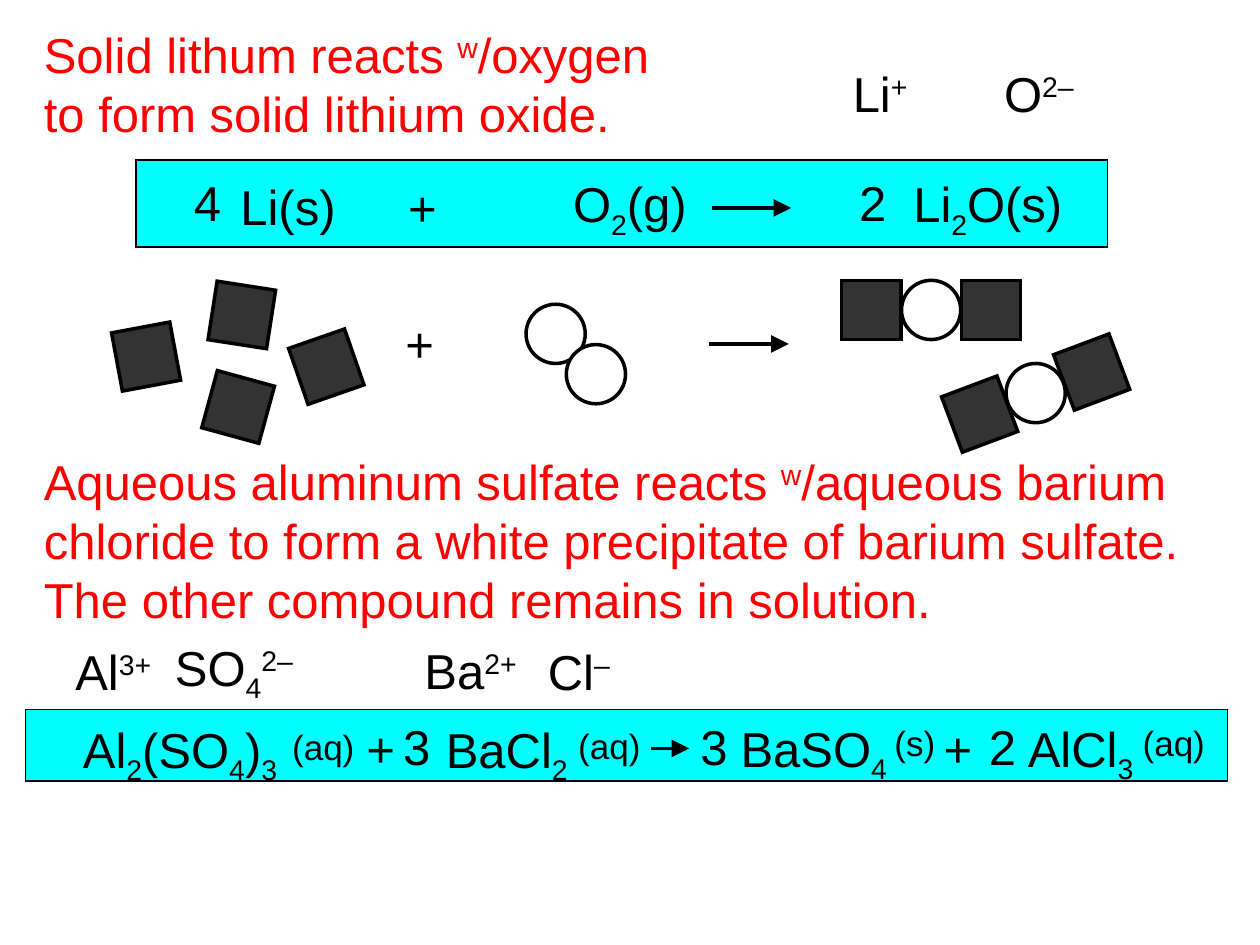
from lxml import etree
from pptx import Presentation
from pptx import util as u
from pptx.dml.color import RGBColor
from pptx.enum import shapes, text
from pptx.oxml.ns import qn

BLACK = RGBColor(0x00, 0x00, 0x00)
WHITE = RGBColor(0xFF, 0xFF, 0xFF)
RED = RGBColor(0xFF, 0x00, 0x00)
CYAN = RGBColor(0x00, 0xFF, 0xFF)
DARK = RGBColor(0x33, 0x33, 0x33)
RECT = shapes.MSO_SHAPE.RECTANGLE
OVAL = shapes.MSO_SHAPE.OVAL
TOP, MIDDLE = text.MSO_ANCHOR.TOP, text.MSO_ANCHOR.MIDDLE
ATOM = 0.47    # side or diameter of an atom
BOND = 0.475   # distance between atom centres in lithium oxide
BASELINES = {"^": "30000", "_": "-25000"}


class Page:
    """Style and drawing methods for one slide."""
    font = "Arial"

    def __init__(self, slide):
        self.s = slide

    def shape(self, kind, x, y, w, h, fill, line=0.75, rot=0, parent=None):
        sp = (parent or self.s).shapes.add_shape(
            kind, u.Inches(x), u.Inches(y), u.Inches(w), u.Inches(h))
        sp.shadow.inherit = False
        sp.fill.solid()
        sp.fill.fore_color.rgb = fill
        sp.line.color.rgb = BLACK
        sp.line.width = u.Pt(line)
        etree.SubElement(sp.line._get_or_add_ln(), qn("a:miter"), lim="800000")
        sp.rotation = rot
        return sp

    def lithium(self, cx, cy, rot=0, parent=None):
        self.shape(RECT, cx - ATOM / 2, cy - ATOM / 2, ATOM, ATOM, DARK, 2, rot, parent)

    def oxygen(self, cx, cy, parent=None):
        self.shape(OVAL, cx - ATOM / 2, cy - ATOM / 2, ATOM, ATOM, WHITE, 2, 0, parent)

    def oxygen_pair(self, cx, cy, offset):
        group = self.s.shapes.add_group_shape()
        for d in (-offset, offset):
            self.oxygen(cx + d, cy + d, group)

    def lithium_oxide(self, cx, cy, rot=0):
        group = self.s.shapes.add_group_shape()
        self.oxygen(cx, cy, group)
        for d in (-BOND, BOND):
            self.lithium(cx + d, cy, parent=group)
        group.rotation = rot

    def arrow(self, x1, x2, y):
        c = self.s.shapes.add_connector(
            shapes.MSO_CONNECTOR.STRAIGHT,
            u.Inches(x1), u.Inches(y), u.Inches(x2), u.Inches(y))
        c.line.color.rgb = BLACK
        c.line.width = u.Pt(2)
        etree.SubElement(c.line._get_or_add_ln(), qn("a:tailEnd"),
                         type="triangle", w="lg", len="lg")
        etree.SubElement(c._element.spPr, qn("a:effectLst"))

    def text(self, x, y, w, h, lines, size=28, color=BLACK, anchor=MIDDLE):
        """Each line is a list of runs; ^ starts a superscript, _ a subscript."""
        tf = self.s.shapes.add_textbox(
            u.Inches(x), u.Inches(y), u.Inches(w), u.Inches(h)).text_frame
        tf.word_wrap = False
        tf.auto_size = text.MSO_AUTO_SIZE.SHAPE_TO_FIT_TEXT
        tf.vertical_anchor = anchor
        for i, runs in enumerate(lines):
            p = tf.paragraphs[0] if i == 0 else tf.add_paragraph()
            for part in runs:
                r = p.add_run()
                r.text = part.lstrip("^_")
                r.font.name = self.font
                r.font.size = u.Pt(size)
                r.font.color.rgb = color
                if part[0] in BASELINES:
                    r._r.get_or_add_rPr().set("baseline", BASELINES[part[0]])

    def formula(self, x, y, w, *runs, anchor=MIDDLE):
        self.text(x, y, w, 0.57, [runs], anchor=anchor)

    def state(self, x, y, w, label):
        self.text(x, y, w, 0.43, [[label]], size=20, anchor=TOP)


def main():
    prs = Presentation()
    prs.slide_width, prs.slide_height = u.Inches(10), u.Inches(7.5)
    page = Page(prs.slides.add_slide(prs.slide_layouts[6]))

    # Equation bands
    page.shape(RECT, 0.2, 5.63, 9.54, 0.57, CYAN)
    page.shape(RECT, 1.08, 1.27, 7.71, 0.69, CYAN)

    # Lithium and oxygen: statement and ions
    page.text(0.25, 0.14, 5.18, 1.04, [
        ["Solid lithum reacts ", "^w", "/oxygen"],
        ["to form solid lithium oxide."]], color=RED)
    page.formula(6.67, 0.45, 0.77, "Li", "^+")
    page.formula(7.87, 0.45, 0.91, "O", "^2–")

    # Lithium and oxygen: equation
    page.formula(1.44, 1.32, 0.42, "4", anchor=TOP)
    page.formula(1.81, 1.35, 0.97, "Li(s)")
    page.formula(3.14, 1.36, 0.43, "+")
    page.formula(4.45, 1.36, 1.13, "O", "_2", "(g)")
    page.arrow(5.65, 6.28, 1.65)
    page.formula(6.72, 1.32, 0.42, "2", anchor=TOP)
    page.formula(7.15, 1.36, 1.42, "Li", "_2", "O(s)")

    # Particle diagram
    for cx, cy, rot in ((1.92, 2.5, 8.8), (1.16, 2.83, -10.6),
                        (2.59, 2.91, -19.2), (1.89, 3.23, 15.3)):
        page.lithium(cx, cy, rot)
    page.formula(3.12, 2.44, 0.43, "+")
    page.oxygen_pair(4.57, 2.81, 0.16)
    page.arrow(5.63, 6.26, 2.73)
    page.lithium_oxide(7.39, 2.46)
    page.lithium_oxide(8.22, 3.12, -20.6)

    # Aluminum sulfate and barium chloride: statement and ions
    page.text(0.25, 3.53, 9.45, 1.51, [
        ["Aqueous aluminum sulfate reacts ", "^w", "/aqueous barium"],
        ["chloride to form a white precipitate of barium sulfate."],
        ["The other compound remains in solution."]], color=RED)
    page.formula(0.5, 5.04, 0.96, "Al", "^3+")
    page.formula(1.29, 5.04, 1.31, "SO", "_4", "^2–")
    page.formula(3.27, 5.03, 1.09, "Ba", "^2+")
    page.formula(4.25, 5.04, 0.83, "Cl", "^–")

    # Aluminum sulfate and barium chloride: equation
    for x, y, w, runs in (
            (0.56, 5.66, 1.82, ("Al", "_2", "(SO", "_4", ")", "_3")),
            (2.81, 5.65, 0.43, ("+",)),
            (3.1, 5.64, 0.42, ("3",)),
            (3.44, 5.66, 1.21, ("BaCl", "_2")),
            (5.46, 5.64, 0.42, ("3",)),
            (5.78, 5.65, 1.4, ("BaSO", "_4")),
            (7.39, 5.65, 0.43, ("+",)),
            (7.75, 5.64, 0.42, ("2",)),
            (8.06, 5.65, 1.07, ("AlCl", "_3"))):
        page.formula(x, y, w, *runs, anchor=TOP)
    page.state(2.22, 5.71, 0.72, "(aq)")
    page.state(4.49, 5.7, 0.72, "(aq)")
    page.arrow(5.17, 5.47, 5.94)
    page.state(7, 5.68, 0.55, "(s)")
    page.state(8.97, 5.68, 0.72, "(aq)")

    prs.save("out.pptx")


if __name__ == "__main__":
    main()
